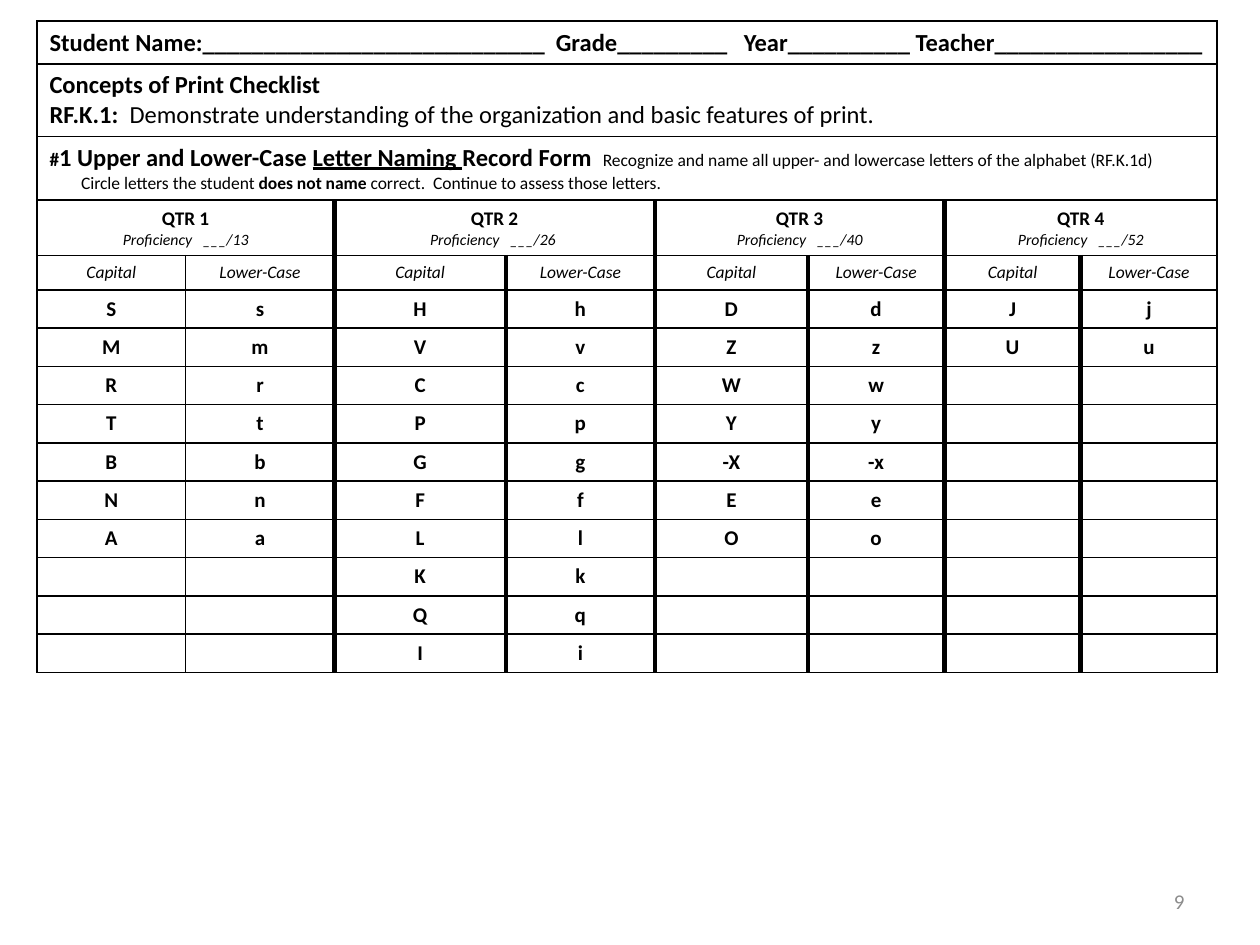
from dataclasses import dataclass
from itertools import zip_longest

from lxml import etree
from pptx import Presentation
from pptx.dml.color import RGBColor
from pptx.enum import text as t
from pptx.oxml import ns
from pptx.util import Pt

BLACK = RGBColor(0x00, 0x00, 0x00)
WHITE = RGBColor(0xFF, 0xFF, 0xFF)
GRAY = RGBColor(0x8C, 0x8C, 0x8C)
FONT = "Calibri"
THIN, THICK = 1, 3
LEFT, MID, RIGHT = t.PP_ALIGN.LEFT, t.PP_ALIGN.CENTER, t.PP_ALIGN.RIGHT

COLS = [85, 85, 98, 85.2, 87.4, 78, 78, 78]
HEADS = [24.5, 41, 36.5, 31.5, 19.5]
ROW = 21.85


@dataclass
class Quarter:
    name: str
    goal: str
    caps: list[str]


QUARTERS = [
    Quarter("QTR 1", "13", "S M R T B N A".split()),
    Quarter("QTR 2", "26 ", "H V C P G F L K Q I".split()),
    Quarter("QTR 3", "40", "D Z W Y -X E O".split()),
    Quarter("QTR 4", "52", "J U".split()),
]
LINES = max(len(q.caps) for q in QUARTERS)


def write(para, text: str, size=12, bold=False, italic=False, under=False,
          color=BLACK, align=LEFT) -> None:
    """Append one formatted run to a paragraph."""
    para.alignment = align
    run = para.add_run()
    run.text = text
    font = run.font
    font.name, font.size = FONT, Pt(size)
    font.bold, font.italic, font.underline = bold, italic, under
    font.color.rgb = color


def edge(cell, side: str, width: float) -> None:
    props = cell._tc.get_or_add_tcPr()
    line = etree.SubElement(props, ns.qn(f"a:ln{side}"), w=str(Pt(width)))
    fill = etree.SubElement(line, ns.qn("a:solidFill"))
    etree.SubElement(fill, ns.qn("a:srgbClr"), val=str(BLACK))


def weight(col: int) -> int:
    """Width of the vertical rule at the left of a column."""
    return THICK if 2 <= col < len(COLS) else THIN


def frame(grid, row: int, col: int, span: int = 1):
    """Merge, border and fill a cell, then return it."""
    cell = grid.cell(row, col)
    if span > 1:
        cell.merge(grid.cell(row, col + span - 1))
    for i in range(col, col + span):
        part = grid.cell(row, i)
        edge(part, "L", weight(col))
        edge(part, "R", weight(col + span))
        edge(part, "T", THIN)
        edge(part, "B", THIN)
        part.fill.solid()
        part.fill.fore_color.rgb = WHITE
    cell.vertical_anchor = t.MSO_ANCHOR.MIDDLE
    return cell


def paras(cell, count: int) -> list:
    body = cell.text_frame
    return [body.paragraphs[0]] + [body.add_paragraph() for _ in range(count - 1)]


def intro(grid) -> None:
    """Fill the three full-width rows at the top."""
    name, goal, form = (frame(grid, row, 0, len(COLS)) for row in range(3))
    name.margin_right = Pt(2)
    write(paras(name, 1)[0], "Student Name:____________________________  Grade_________"
          "   Year__________ Teacher_________________", size=14, bold=True)

    top, low = paras(goal, 2)
    write(top, "Concepts of Print Checklist", size=14, bold=True)
    write(low, "RF.K.1:  ", size=14, bold=True)
    write(low, "Demonstrate understanding of the organization and basic features of print.",
          size=14)

    top, low = paras(form, 2)
    write(top, "#", size=11, bold=True)
    write(top, "1 Upper and Lower-Case ", size=14, bold=True)
    write(top, "Letter Naming ", size=14, bold=True, under=True)
    write(top, "Record Form  ", size=14, bold=True)
    write(top, "Recognize and name all upper- and lowercase letters of the alphabet (RF.K.1d)",
          size=10)
    low._p.get_or_add_pPr().set("marL", str(Pt(18)))
    write(low, "Circle letters the student ", size=10)
    write(low, "does not name ", size=10, bold=True)
    write(low, "correct.  Continue to assess those letters.", size=10)


def quarter(grid, col: int, item: Quarter) -> None:
    """Fill the pair of columns that belongs to one quarter."""
    top, low = paras(frame(grid, 3, col, 2), 2)
    write(top, item.name, size=11, bold=True, align=MID)
    write(low, f"Proficiency   ___/{item.goal}", size=9, italic=True, align=MID)
    for i, label in enumerate(("Capital", "Lower-Case")):
        para = paras(frame(grid, 4, col + i), 1)[0]
        write(para, label, size=10, italic=True, align=MID)
    for row, (_, cap) in enumerate(zip_longest(range(LINES), item.caps), len(HEADS)):
        for i in range(2):
            para = paras(frame(grid, row, col + i), 1)[0]
            if cap:
                write(para, cap.lower() if i else cap, bold=True, align=MID)
            else:
                para._p.get_or_add_endParaRPr().set("sz", "1200")


def main() -> None:
    deck = Presentation()
    deck.slide_width, deck.slide_height = Pt(720), Pt(540)
    slide = deck.slides.add_slide(deck.slide_layouts[6])

    rows = HEADS + [ROW] * LINES
    grid = slide.shapes.add_table(len(rows), len(COLS), Pt(21.1), Pt(12.1),
                                  Pt(sum(COLS)), Pt(sum(rows))).table
    grid.first_row = grid.horz_banding = False
    for col, width in zip(grid.columns, COLS):
        col.width = Pt(width)
    for row, height in zip(grid.rows, rows):
        row.height = Pt(height)
    intro(grid)
    for i, item in enumerate(QUARTERS):
        quarter(grid, 2 * i, item)

    page = slide.shapes.add_textbox(Pt(516), Pt(500.5), Pt(168), Pt(28.75)).text_frame
    page.word_wrap = True
    page.vertical_anchor = t.MSO_ANCHOR.MIDDLE
    write(page.paragraphs[0], "9", color=GRAY, align=RIGHT)

    deck.save("out.pptx")


if __name__ == "__main__":
    main()
